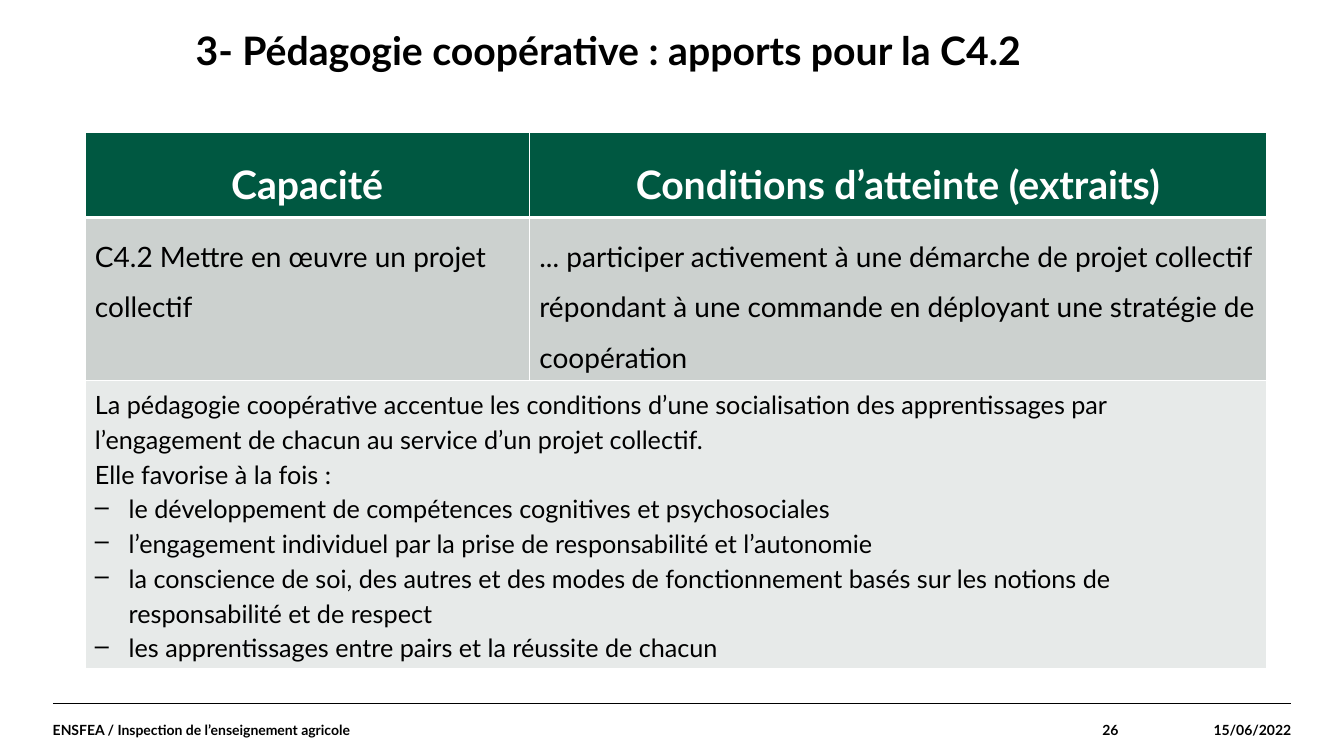
from lxml import etree
from pptx import Presentation
from pptx import util as u
from pptx.dml.color import RGBColor
from pptx.enum import shapes, text
from pptx.oxml import ns

BLACK = RGBColor(0, 0, 0)
WHITE = RGBColor(0xFF, 0xFF, 0xFF)
GREEN = RGBColor(0x00, 0x58, 0x41)
GREY = RGBColor(0xCC, 0xD1, 0xCF)
PALE = RGBColor(0xE7, 0xEA, 0xE9)
FONT = "Lato"
LEFT, CENTER, RIGHT = text.PP_ALIGN.LEFT, text.PP_ALIGN.CENTER, text.PP_ALIGN.RIGHT

INTRO = [
    "La pédagogie coopérative accentue les conditions d’une socialisation des "
    "apprentissages par l’engagement de chacun au service d’un projet collectif.",
    "Elle favorise à la fois\u00a0:",
]
BENEFITS = [
    "le développement de compétences cognitives et psychosociales",
    "l’engagement individuel par la prise de responsabilité et l’autonomie",
    "la conscience de soi, des autres et des modes de fonctionnement basés sur "
    "les notions de responsabilité et de respect",
    "les apprentissages entre pairs et la réussite de chacun",
]


def format_paragraph(p, size, color=BLACK, bold=False, align=LEFT, spacing=1.0):
    p.alignment = align
    p.line_spacing = spacing
    for r in p.runs:
        r.font.name = FONT
        r.font.size = u.Pt(size)
        r.font.bold = bold
        r.font.color.rgb = color


def add_text(s, content, left, top, width, height, size, align=LEFT,
             anchor=text.MSO_ANCHOR.MIDDLE, spacing=1.0):
    sp = s.shapes.add_textbox(u.Cm(left), u.Cm(top), u.Cm(width), u.Cm(height))
    tf = sp.text_frame
    tf.word_wrap = True
    tf.vertical_anchor = anchor
    tf.margin_left = tf.margin_right = tf.margin_top = tf.margin_bottom = 0
    tf.text = content
    format_paragraph(tf.paragraphs[0], size, bold=True, align=align, spacing=spacing)


def add_rule(s, left, top, right):
    line = s.shapes.add_connector(shapes.MSO_CONNECTOR.STRAIGHT,
                                  u.Cm(left), u.Cm(top), u.Cm(right), u.Cm(top))
    line.line.color.rgb = BLACK
    line.line.width = u.Pt(0.8)
    etree.SubElement(line._element.spPr, ns.qn("a:effectLst"))


def set_borders(cell, **widths):
    tcPr = cell._tc.get_or_add_tcPr()
    for side in "LRTB":
        ln = etree.SubElement(tcPr, ns.qn(f"a:ln{side}"), w=str(u.Pt(widths.get(side, 1))))
        fill = etree.SubElement(ln, ns.qn("a:solidFill"))
        etree.SubElement(fill, ns.qn("a:srgbClr"), val=str(WHITE))


def paint_cell(cell, color, **widths):
    set_borders(cell, **widths)
    cell.fill.solid()
    cell.fill.fore_color.rgb = color


def add_dash(p):
    pPr = p._p.get_or_add_pPr()
    indent = u.Cm(0.85)
    pPr.set("marL", str(indent))
    pPr.set("indent", str(-indent))
    etree.SubElement(pPr, ns.qn("a:buChar"), char="–")


def fill_benefits(cell):
    tf = cell.text_frame
    tf.text = "\n".join(INTRO + BENEFITS)
    for i, p in enumerate(tf.paragraphs):
        if i >= len(INTRO):
            add_dash(p)
        format_paragraph(p, 18, spacing=1.15)


def add_skill_table(s):
    widths, heights = [11.2, 18.57], [2.15, 4.1, 7.2]
    table = s.shapes.add_table(3, 2, u.Cm(2.14), u.Cm(3.33),
                               u.Cm(sum(widths)), u.Cm(sum(heights))).table
    for column, width in zip(table.columns, widths):
        column.width = u.Cm(width)
    for row, height in zip(table.rows, heights):
        row.height = u.Cm(height)

    headers = ["Capacité", "Conditions d’atteinte (extraits)"]
    skill = [
        "C4.2 Mettre en œuvre un projet collectif",
        "... participer activement à une démarche de projet collectif répondant à "
        "une commande en déployant une stratégie de coopération",
    ]
    for i in range(2):
        head, body, last = (table.cell(row, i) for row in range(3))
        head.text_frame.text = headers[i]
        format_paragraph(head.text_frame.paragraphs[0], 28, WHITE, True, CENTER, 1.5)
        paint_cell(head, GREEN, B=3)
        body.text_frame.text = skill[i]
        format_paragraph(body.text_frame.paragraphs[0], 20, spacing=1.5)
        paint_cell(body, GREY, T=3)
        paint_cell(last, PALE)
    table.cell(2, 0).merge(table.cell(2, 1))
    fill_benefits(table.cell(2, 0))


def add_footer(s):
    top, height = 17.73, 1.32
    add_rule(s, 1.33, top, 32.54)
    add_text(s, "ENSFEA / Inspection de l’enseignement agricole",
             1.33, top, 21.86, height, 10)
    add_text(s, "26", 23.19, top, 5, height, 10, RIGHT)
    add_text(s, "15/06/2022", 28.19, top, 4.35, height, 10, RIGHT)


def main():
    prs = Presentation()
    prs.slide_width, prs.slide_height = u.Cm(33.87), u.Cm(19.05)
    s = prs.slides.add_slide(prs.slide_layouts[6])
    add_text(s, "3- Pédagogie coopérative : apports pour la C4.2",
             4.93, 0.81, 26.37, 2.67, 28, anchor=text.MSO_ANCHOR.TOP, spacing=0.9)
    add_skill_table(s)
    add_footer(s)
    prs.save("out.pptx")


if __name__ == "__main__":
    main()
